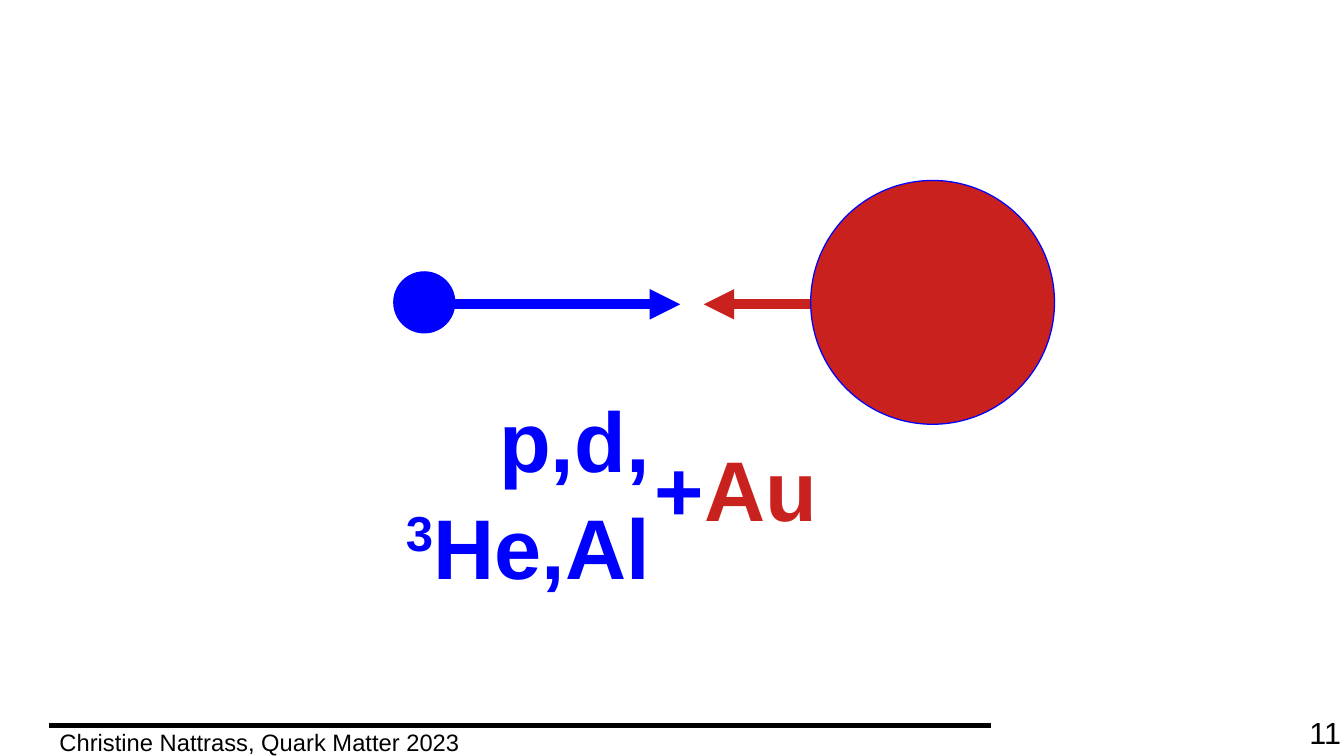
"""Build the slide showing a small nucleus colliding with a gold nucleus."""
from dataclasses import dataclass

from lxml.etree import SubElement
from pptx import Presentation
from pptx.dml.color import RGBColor
from pptx.enum.shapes import MSO_CONNECTOR, MSO_SHAPE
from pptx.enum.text import PP_ALIGN
from pptx.oxml.ns import qn
from pptx.util import Cm, Pt


@dataclass(frozen=True)
class Theme:
    font: str = "Arial"
    black: RGBColor = RGBColor(0x00, 0x00, 0x00)
    blue: RGBColor = RGBColor(0x00, 0x00, 0xFF)
    red: RGBColor = RGBColor(0xC9, 0x21, 0x1E)
    footer: int = 14
    number: int = 18
    label: int = 50


theme = Theme()


def add_line(x1, x2, y, color, width, arrow):
    ln = s.shapes.add_connector(MSO_CONNECTOR.STRAIGHT, Cm(x1), Cm(y), Cm(x2), Cm(y))
    ln.line.color.rgb = color
    ln.line.width = Pt(width)
    if arrow:
        SubElement(ln.line._get_or_add_ln(), qn("a:tailEnd"), type="triangle")
    SubElement(ln._element.spPr, qn("a:effectLst"))


def add_text(x, y, w, h, align, size, bold, spacing, runs):
    tf = s.shapes.add_textbox(Cm(x), Cm(y), Cm(w), Cm(h)).text_frame
    tf.word_wrap = True
    p = tf.paragraphs[0]
    p.alignment = align
    p.line_spacing = spacing
    for text, color, baseline in runs:
        if text == "\n":
            p.add_line_break()
            continue
        r = p.add_run()
        r.text = text
        r.font.name = theme.font
        r.font.size = Pt(size)
        r.font.bold = bold
        r.font.color.rgb = color
        if baseline:
            r.font._element.set("baseline", str(baseline))


prs = Presentation()
prs.slide_width, prs.slide_height = Cm(28), Cm(15.75)
s = prs.slides.add_slide(prs.slide_layouts[6])

add_text(0.99, 15.04, 20.3, 1.68, PP_ALIGN.LEFT, theme.footer, False, 1.0,
         [("Christine Nattrass, Quark Matter 2023", theme.black, 0)])
add_text(17.55, 14.76, 10.64, 1.19, PP_ALIGN.RIGHT, theme.number, False, 1.0,
         [("11", theme.black, 0)])
add_line(1.02, 20.65, 15.11, theme.black, 3, False)

add_line(19.43, 14.66, 6.34, theme.red, 6, True)
add_line(9.4, 14.17, 6.34, theme.blue, 6, True)
nuclei = [(8.84, 6.3, 1.27, theme.blue), (19.43, 6.3, 5.08, theme.red)]
for cx, cy, size, color in nuclei:
    sp = s.shapes.add_shape(MSO_SHAPE.OVAL, Cm(cx - size / 2), Cm(cy - size / 2),
                            Cm(size), Cm(size))
    sp.shadow.inherit = False
    sp.fill.solid()
    sp.fill.fore_color.rgb = color
    sp.line.color.rgb = theme.blue
    sp.line.width = Pt(0)

add_text(13.39, 8.84, 12.14, 2.21, PP_ALIGN.LEFT, theme.label, True, 1.06,
         [("+", theme.blue, 0), ("Au", theme.red, 0)])
add_text(5.05, 7.82, 8.74, 4.19, PP_ALIGN.RIGHT, theme.label, True, 1.06,
         [("p,d,", theme.blue, 0), ("\n", theme.blue, 0),
          ("3", theme.blue, 33000), ("He,Al", theme.blue, 0)])

prs.save("out.pptx")
